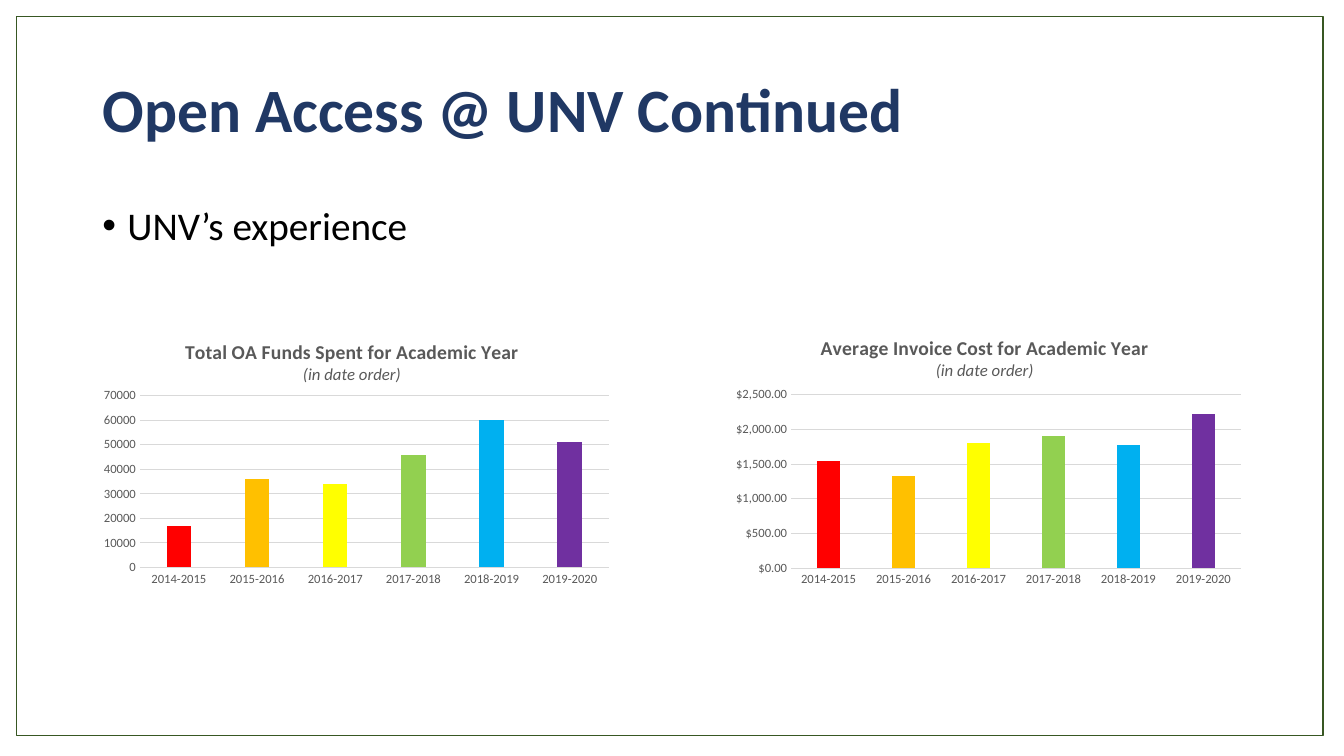
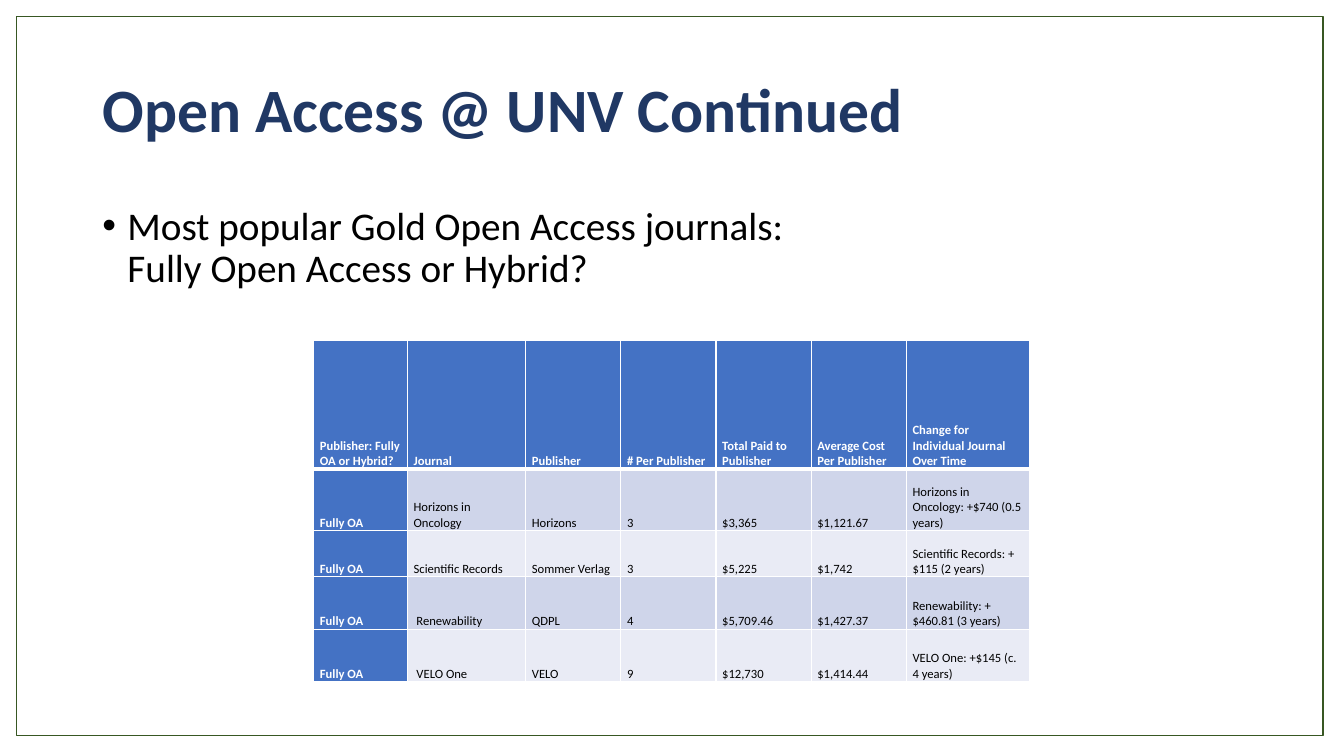
from dataclasses import dataclass

from lxml import etree
from pptx import Presentation
from pptx.chart.chart import Chart
from pptx.chart.data import CategoryChartData
from pptx.dml.color import RGBColor
from pptx.enum.chart import XL_CHART_TYPE, XL_TICK_MARK
from pptx.enum.shapes import MSO_SHAPE
from pptx.enum.text import MSO_ANCHOR, MSO_AUTO_SIZE, PP_ALIGN
from pptx.oxml.ns import qn
from pptx.slide import Slide
from pptx.table import _Cell
from pptx.util import Pt

COLUMN_CHART = XL_CHART_TYPE.COLUMN_CLUSTERED
NO_TICK = XL_TICK_MARK.NONE
RECTANGLE = MSO_SHAPE.RECTANGLE
MIDDLE, BOTTOM = MSO_ANCHOR.MIDDLE, MSO_ANCHOR.BOTTOM
NO_AUTO_SIZE = MSO_AUTO_SIZE.NONE
LEFT = PP_ALIGN.LEFT
TITLE_ONLY_LAYOUT = 5


@dataclass(frozen=True)
class Theme:
    font: str = "Calibri"
    title: str = "203864"
    text: str = "000000"
    white: str = "FFFFFF"
    frame: str = "385723"
    chart_text: str = "595959"
    grid: str = "D9D9D9"
    accent: str = "4472C4"
    bands: tuple[str, ...] = ("CFD5EA", "E9EBF5")
    columns: tuple[str, ...] = (
        "FF0000", "FFC000", "FFFF00", "92D050", "00B0F0", "7030A0")
    title_size: float = 44
    body_size: float = 28
    chart_title_size: float = 14
    chart_subtitle_size: float = 12
    small_size: float = 9


@dataclass(frozen=True)
class Box:
    left: float
    top: float
    width: float
    height: float

    def lengths(self) -> tuple[Pt, ...]:
        return Pt(self.left), Pt(self.top), Pt(self.width), Pt(self.height)


@dataclass(frozen=True)
class YearChart:
    title: str
    box: Box
    values: tuple[int, ...]
    maximum: int
    step: int
    number_format: str
    title_place: tuple[float, float]
    plot_place: tuple[float, float, float, float]


THEME = Theme()
TITLE_BOX = Box(66, 28.5, 828, 104.5)
BODY_BOX = Box(66, 144, 828, 342.5)
FRAME_BOX = Box(12, 12, 933, 513.5)
SLIDE_TITLE = "Open Access @ UNV Continued"
CHART_SUBTITLE = "(in date order)"
YEARS = [f"{year}-{year + 1}" for year in range(2014, 2020)]

YEAR_CHARTS = (
    YearChart("Total OA Funds Spent for Academic Year",
              Box(66, 228, 376.5, 195),
              (17000, 36000, 34000, 46000, 60000, 51000),
              70000, 10000, "General",
              (0.17, 0.06), (0.09, 0.28, 0.89, 0.63)),
    YearChart("Average Invoice Cost for Academic Year",
              Box(516, 227, 378, 196.5),
              (1550, 1330, 1800, 1900, 1780, 2220),
              2500, 500, '"$"#,##0.00',
              (0.18, 0.05), (0.13, 0.28, 0.85, 0.63)),
)

JOURNAL_ROWS = (
    ("Publisher: Fully OA or Hybrid?", "Journal", "Publisher",
     "# Per Publisher", "Total Paid to Publisher",
     "Average Cost Per Publisher", "Change for Individual Journal Over Time"),
    ("Fully OA", "Horizons in Oncology", "Horizons", "3", "$3,365",
     "$1,121.67", "Horizons in Oncology: +$740 (0.5 years)"),
    ("Fully OA", "Scientific Records", "Sommer Verlag", "3", "$5,225",
     "$1,742", "Scientific Records: +$115 (2 years)"),
    ("Fully OA", " Renewability", "QDPL", "4", "$5,709.46",
     "$1,427.37", "Renewability: +$460.81 (3 years)"),
    ("Fully OA", " VELO One", "VELO", "9", "$12,730",
     "$1,414.44", "VELO One: +$145 (c. 4 years)"),
)
JOURNAL_WIDTHS = (67, 84.5, 68, 68, 68, 68, 88)
JOURNAL_HEIGHTS = (91.5, 44, 33, 37.5, 37.5)
JOURNAL_BOX = Box(224, 243.5, sum(JOURNAL_WIDTHS), sum(JOURNAL_HEIGHTS))


def color_of(value: str) -> RGBColor:
    return RGBColor.from_string(value)


def format_font(font, *, size: float, color: str,
                bold: bool = False, italic: bool = False) -> None:
    font.name = THEME.font
    font.size = Pt(size)
    font.bold = bold
    font.italic = italic
    font.color.rgb = color_of(color)


def write_text(paragraph, text: str, **text_format) -> None:
    for index, line in enumerate(text.split("\n")):
        if index:
            paragraph.add_line_break()
        run = paragraph.add_run()
        run.text = line
        format_font(run.font, **text_format)


def add_title(slide: Slide) -> None:
    title = slide.shapes.title
    title.left, title.top, title.width, title.height = TITLE_BOX.lengths()
    text_frame = title.text_frame
    text_frame.vertical_anchor = MIDDLE
    text_frame.auto_size = NO_AUTO_SIZE
    paragraph = text_frame.paragraphs[0]
    paragraph.alignment = LEFT
    paragraph.line_spacing = 0.9
    write_text(paragraph, SLIDE_TITLE, size=THEME.title_size,
               color=THEME.title, bold=True)


def add_bullet(slide: Slide, text: str) -> None:
    text_frame = slide.shapes.add_textbox(*BODY_BOX.lengths()).text_frame
    text_frame.word_wrap = True
    paragraph = text_frame.paragraphs[0]
    paragraph.line_spacing = 0.9
    paragraph.space_before = Pt(10)
    properties = paragraph._p.get_or_add_pPr()
    properties.set("marL", str(Pt(18)))
    properties.set("indent", str(-Pt(18)))
    etree.SubElement(properties, qn("a:buFont"), typeface="Arial")
    etree.SubElement(properties, qn("a:buChar"), char="•")
    write_text(paragraph, text, size=THEME.body_size, color=THEME.text)


def add_frame(slide: Slide) -> None:
    frame = slide.shapes.add_shape(RECTANGLE, *FRAME_BOX.lengths())
    frame.shadow.inherit = False
    frame.fill.background()
    frame.line.color.rgb = color_of(THEME.frame)
    frame.line.width = Pt(1)


def add_slide(presentation, bullet: str) -> Slide:
    slide = presentation.slides.add_slide(
        presentation.slide_layouts[TITLE_ONLY_LAYOUT])
    add_title(slide)
    add_bullet(slide, bullet)
    add_frame(slide)
    return slide


def place_chart_part(part, index: int, place: tuple[float, ...],
                     inner: bool = False) -> None:
    previous = part.find(qn("c:layout"))
    if previous is not None:
        part.remove(previous)
    layout = etree.Element(qn("c:layout"))
    manual = etree.SubElement(layout, qn("c:manualLayout"))
    if inner:
        etree.SubElement(manual, qn("c:layoutTarget"), val="inner")
    for mode in ("xMode", "yMode"):
        etree.SubElement(manual, qn(f"c:{mode}"), val="edge")
    for name, value in zip("xywh", place):
        etree.SubElement(manual, qn(f"c:{name}"), val=str(value))
    part.insert(index, layout)


def format_axes(chart: Chart, year_chart: YearChart) -> None:
    category_axis, value_axis = chart.category_axis, chart.value_axis
    for axis in (category_axis, value_axis):
        axis.major_tick_mark = NO_TICK
        axis.minor_tick_mark = NO_TICK
        format_font(axis.tick_labels.font, size=THEME.small_size,
                    color=THEME.chart_text)
    value_axis.has_major_gridlines = True
    for line in (category_axis.format.line, value_axis.major_gridlines.format.line):
        line.color.rgb = color_of(THEME.grid)
        line.width = Pt(0.75)
    value_axis.format.line.fill.background()
    value_axis.minimum_scale = 0
    value_axis.maximum_scale = year_chart.maximum
    value_axis.major_unit = year_chart.step
    value_axis.tick_labels.number_format = year_chart.number_format
    value_axis.tick_labels.number_format_is_linked = False


def add_year_chart(slide: Slide, year_chart: YearChart) -> None:
    chart_data = CategoryChartData()
    chart_data.categories = YEARS
    chart_data.add_series("Series 1", year_chart.values)
    chart = slide.shapes.add_chart(
        COLUMN_CHART, *year_chart.box.lengths(), chart_data).chart
    format_font(chart.font, size=10, color=THEME.text)
    chart.has_legend = False

    chart.has_title = True
    text_frame = chart.chart_title.text_frame
    write_text(text_frame.paragraphs[0], year_chart.title,
               size=THEME.chart_title_size, color=THEME.chart_text, bold=True)
    write_text(text_frame.add_paragraph(), CHART_SUBTITLE,
               size=THEME.chart_subtitle_size, color=THEME.chart_text,
               italic=True)
    place_chart_part(chart.chart_title._element, 1, year_chart.title_place)

    plot = chart.plots[0]
    plot.vary_by_categories = False
    plot.gap_width = 219
    plot.overlap = -27
    series = plot.series[0]
    series.format.fill.solid()
    series.format.fill.fore_color.rgb = color_of(THEME.accent)
    for index, color in enumerate(THEME.columns):
        fill = series.points[index].format.fill
        fill.solid()
        fill.fore_color.rgb = color_of(color)
    format_axes(chart, year_chart)
    plot_area = chart._chartSpace.find(".//" + qn("c:plotArea"))
    place_chart_part(plot_area, 0, year_chart.plot_place, inner=True)


def set_borders(cell: _Cell, top: float, bottom: float) -> None:
    properties = cell._tc.get_or_add_tcPr()
    for side, width in (("L", 1), ("R", 1), ("T", top), ("B", bottom)):
        line = etree.SubElement(properties, qn(f"a:ln{side}"), w=str(Pt(width)))
        fill = etree.SubElement(line, qn("a:solidFill"))
        etree.SubElement(fill, qn("a:srgbClr"), val=THEME.white)


def format_cell(cell: _Cell, text: str, row: int, column: int) -> None:
    is_heading = row == 0 or column == 0
    set_borders(cell, top=3 if row == 1 else 1, bottom=3 if row == 0 else 1)
    cell.fill.solid()
    cell.fill.fore_color.rgb = color_of(
        THEME.accent if is_heading else THEME.bands[(row - 1) % 2])
    cell.vertical_anchor = BOTTOM
    cell.margin_left = cell.margin_right = Pt(4.5)
    cell.margin_top = cell.margin_bottom = Pt(0)
    write_text(cell.text_frame.paragraphs[0], text, size=THEME.small_size,
               color=THEME.white if is_heading else THEME.text,
               bold=is_heading)


def add_journal_table(slide: Slide) -> None:
    table = slide.shapes.add_table(
        len(JOURNAL_ROWS), len(JOURNAL_WIDTHS), *JOURNAL_BOX.lengths()).table
    table.first_col = True
    for column, width in zip(table.columns, JOURNAL_WIDTHS):
        column.width = Pt(width)
    for row, height in zip(table.rows, JOURNAL_HEIGHTS):
        row.height = Pt(height)
    for row_index, texts in enumerate(JOURNAL_ROWS):
        for column_index, text in enumerate(texts):
            format_cell(table.cell(row_index, column_index), text,
                        row_index, column_index)


def main() -> None:
    presentation = Presentation()
    presentation.slide_width = Pt(960)
    presentation.slide_height = Pt(540)

    spending_slide = add_slide(presentation, "UNV’s experience")
    for year_chart in YEAR_CHARTS:
        add_year_chart(spending_slide, year_chart)

    journal_slide = add_slide(
        presentation,
        "Most popular Gold Open Access journals:\nFully Open Access or Hybrid?")
    add_journal_table(journal_slide)

    presentation.save("out.pptx")


if __name__ == "__main__":
    main()
